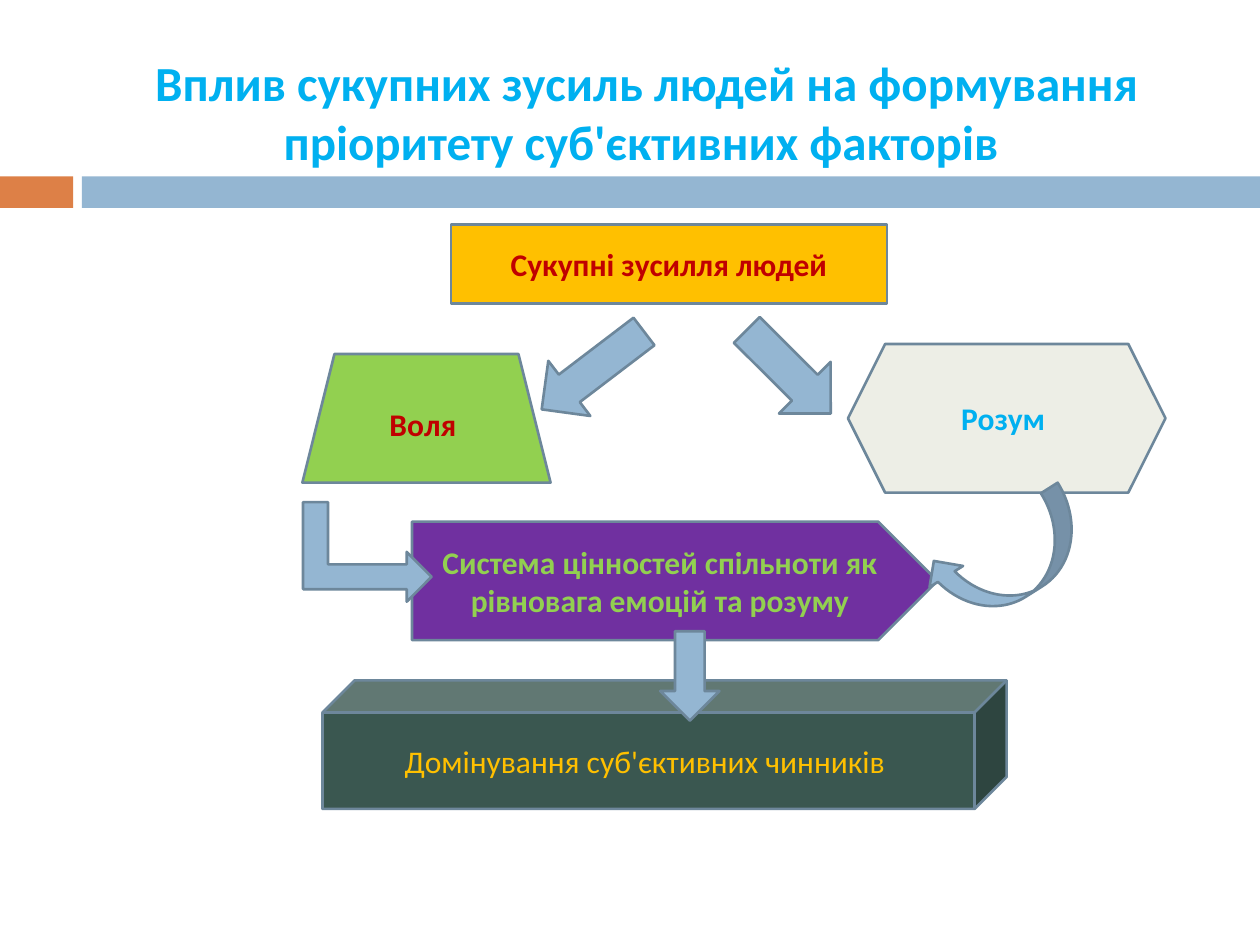
"""Build a slide on how joint human effort shapes subjective factors."""
from pptx import Presentation
from pptx.dml.color import RGBColor
from pptx.enum.shapes import MSO_SHAPE
from pptx.enum.text import MSO_ANCHOR, PP_ALIGN
from pptx.util import Inches, Pt

RECT = MSO_SHAPE.RECTANGLE
TRAP = MSO_SHAPE.TRAPEZOID
HEX = MSO_SHAPE.HEXAGON
PLATE = MSO_SHAPE.PENTAGON
CUBE = MSO_SHAPE.CUBE
DOWN = MSO_SHAPE.DOWN_ARROW
BENT = MSO_SHAPE.BENT_UP_ARROW
CURVE = MSO_SHAPE.CURVED_LEFT_ARROW
CENTER = PP_ALIGN.CENTER
MIDDLE = MSO_ANCHOR.MIDDLE

FONT = "Calibri"
COLORS = {
    "rust": "DD8047", "blue": "94B6D2", "edge": "6D879B", "sky": "00B0F0",
    "gold": "FFC000", "red": "C00000", "green": "92D050", "pale": "EDEEE6",
    "purple": "7030A0", "pine": "3A5750",
}
TITLE = "Вплив сукупних зусиль людей на формування пріоритету суб'єктивних факторів "
TITLE_BOX = (0.67, 0.44, 8.92, 0.89)
BANDS = [((0, 1.4, 0.58, 0.25), "rust"), ((0.65, 1.4, 9.35, 0.25), "blue")]
NODES = [
    (RECT, (3.58, 1.78, 3.46, 0.63), "gold", "Сукупні зусилля людей", "red", True),
    (TRAP, (2.4, 2.81, 1.97, 1.02), "green", "Воля ", "red", True),
    (HEX, (6.73, 2.73, 2.52, 1.18), "pale", "Розум ", "sky", True),
    (PLATE, (3.27, 4.14, 4.17, 0.94), "purple",
     "Система цінностей спільноти як рівновага емоцій та розуму", "green", True),
    (CUBE, (2.56, 5.4, 5.43, 1.02), "pine",
     "Домінування суб'єктивних чинників ", "gold", False),
]
ARROWS = [
    (DOWN, (4.43, 2.43, 0.55, 1.02), 52.7),
    (DOWN, (5.97, 2.48, 0.58, 0.94), 314.9),
    (BENT, (2.52, 3.87, 0.79, 1.02), 90),
    (CURVE, (7.69, 3.79, 0.63, 1.32), 57.7),
    (DOWN, (5.24, 5.01, 0.47, 0.71), 0),
]


def color(name):
    return RGBColor.from_string(COLORS[name])


def write(shape, text, size=18, tint="red", bold=True):
    frame = shape.text_frame
    frame.word_wrap = True
    frame.vertical_anchor = MIDDLE
    para = frame.paragraphs[0]
    para.alignment = CENTER
    run = para.add_run()
    run.text = text
    font = run.font
    font.name, font.size, font.bold = FONT, Pt(size), bold
    font.color.rgb = color(tint)


def draw(slide, kind, box, fill, edge=True, turn=0):
    shape = slide.shapes.add_shape(kind, *map(Inches, box))
    shape.shadow.inherit = False
    shape.fill.solid()
    shape.fill.fore_color.rgb = color(fill)
    shape.rotation = turn
    if edge:
        shape.line.color.rgb = color("edge")
        shape.line.width = Pt(1.5)
    else:
        shape.line.fill.background()
    return shape


def main():
    deck = Presentation()
    deck.slide_width, deck.slide_height = Inches(10), Inches(7.5)
    slide = deck.slides.add_slide(deck.slide_layouts[5])
    for box, fill in BANDS:
        draw(slide, RECT, box, fill, edge=False)
    title = slide.shapes.title
    title.left, title.top, title.width, title.height = map(Inches, TITLE_BOX)
    write(title, TITLE, size=28, tint="sky")
    for kind, box, fill, text, tint, bold in NODES:
        write(draw(slide, kind, box, fill), text, tint=tint, bold=bold)
    for kind, box, turn in ARROWS:
        draw(slide, kind, box, "blue", turn=turn)
    deck.save("out.pptx")


if __name__ == "__main__":
    main()
